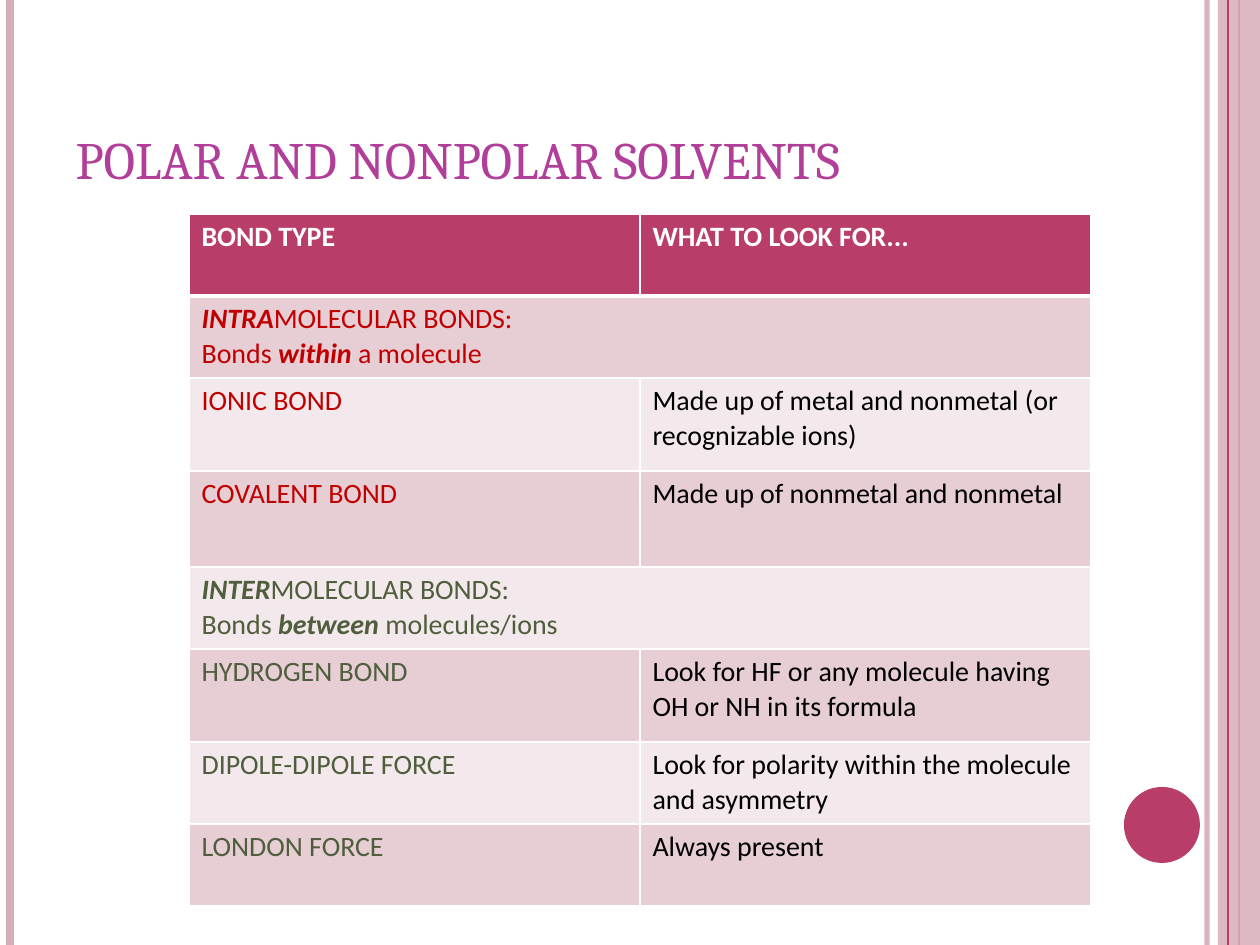
from lxml.etree import SubElement
from pptx import Presentation
from pptx.dml.color import RGBColor
from pptx.enum.shapes import MSO_CONNECTOR, MSO_SHAPE
from pptx.enum.text import MSO_ANCHOR, PP_ALIGN
from pptx.oxml.ns import qn
from pptx.util import Emu, Pt

EMU_PER_PX = 914400 / 126
WIDTH, HEIGHT = 1260, 945

CRIMSON, PINK, WHITE, BLACK = "B83D68", "D8AFB9", "FFFFFF", "000000"
PURPLE, RED, GREEN = "B13F9A", "C00000", "4F5E3C"
BANDS = ["E6CED4", "F3E8EB"]

HEADER = ["BOND TYPE", "WHAT TO LOOK FOR..."]
# Asterisks enclose bold italic words; a row with no second text spans the table.
ROWS = [
    (82, RED, "*INTRA*MOLECULAR BONDS:\nBonds *within* a molecule", None),
    (93, RED, "IONIC BOND", "Made up of metal and nonmetal (or recognizable ions)"),
    (96, RED, "COVALENT BOND", "Made up of nonmetal and nonmetal"),
    (82, GREEN, "*INTER*MOLECULAR BONDS:\nBonds *between *molecules/ions", None),
    (93, GREEN, "HYDROGEN BOND",
     "Look for HF or any molecule having OH or NH in its formula"),
    (82, GREEN, "DIPOLE-DIPOLE FORCE",
     "Look for polarity within the molecule and asymmetry"),
    (82, GREEN, "LONDON FORCE", "Always present"),
]
HEADER_HEIGHT = 82


def px(*lengths):
    return [Emu(round(length * EMU_PER_PX)) for length in lengths]


def rgb(color):
    return RGBColor.from_string(color)


def set_alpha(fill_parent, percent):
    """Make the solid fill below the given element partly transparent."""
    color = fill_parent.find(qn("a:solidFill"))[0]
    SubElement(color, qn("a:alpha"), val=str(percent * 1000))


def add_stripe(slide, x, color, width, alpha=100):
    """Add a vertical line over the full slide height."""
    line = slide.shapes.add_connector(MSO_CONNECTOR.STRAIGHT, *px(x, 0, x, HEIGHT))
    line.line.color.rgb = rgb(color)
    line.line.width = Pt(width)
    properties = line._element.spPr
    if alpha < 100:
        set_alpha(properties.find(qn("a:ln")), alpha)
    SubElement(properties, qn("a:effectLst"))


def add_plain_shape(slide, kind, box, color, alpha=100):
    shape = slide.shapes.add_shape(kind, *px(*box))
    shape.shadow.inherit = False
    shape.fill.solid()
    shape.fill.fore_color.rgb = rgb(color)
    shape.line.fill.background()
    if alpha < 100:
        set_alpha(shape._element.spPr, alpha)


def format_font(font, name, size, color):
    font.name = name
    font.size = Pt(size)
    font.color.rgb = rgb(color)


def set_title(slide, text):
    title = slide.shapes.title
    title.left, title.top, title.width, title.height = px(63, 38, 1029, 158)
    frame = title.text_frame
    frame.text = text
    frame.word_wrap = True
    frame.vertical_anchor = MSO_ANCHOR.BOTTOM
    paragraph = frame.paragraphs[0]
    paragraph.alignment = PP_ALIGN.LEFT
    format_font(paragraph.runs[0].font, "Cambria", 30, PURPLE)


def set_borders(cell, top, bottom):
    properties = cell._tc.get_or_add_tcPr()
    for side, width in (("L", 1), ("R", 1), ("T", top), ("B", bottom)):
        line = SubElement(properties, qn(f"a:ln{side}"), w=str(Pt(width)))
        fill = SubElement(line, qn("a:solidFill"))
        SubElement(fill, qn("a:srgbClr"), val=WHITE)


def write_cell(cell, text, color, bold=False):
    """Write the text, with the words between asterisks in bold italics."""
    frame = cell.text_frame
    for index, line in enumerate(text.split("\n")):
        paragraph = frame.add_paragraph() if index else frame.paragraphs[0]
        for part, words in enumerate(line.split("*")):
            if words:
                run = paragraph.add_run()
                run.text = words
                format_font(run.font, "Calibri", 16, color)
                run.font.bold = bold or part % 2 == 1
                run.font.italic = part % 2 == 1


def add_bond_table(slide):
    heights = [HEADER_HEIGHT] + [row[0] for row in ROWS]
    frame = slide.shapes.add_table(len(heights), 2, *px(189, 214, 902, sum(heights)))
    table = frame.table
    for row, height in zip(table.rows, px(*heights)):
        row.height = height

    for row_index in range(len(heights)):
        fill = BANDS[(row_index - 1) % 2] if row_index else CRIMSON
        for column_index in range(2):
            cell = table.cell(row_index, column_index)
            set_borders(cell, 3 if row_index == 1 else 1, 1 if row_index else 3)
            cell.fill.solid()
            cell.fill.fore_color.rgb = rgb(fill)

    for column_index, text in enumerate(HEADER):
        write_cell(table.cell(0, column_index), text, WHITE, bold=True)
    for row_index, (_, color, bond, clue) in enumerate(ROWS, start=1):
        first, second = table.cell(row_index, 0), table.cell(row_index, 1)
        write_cell(first, bond, color)
        if clue:
            write_cell(second, clue, BLACK)
        else:
            first.merge(second)


def add_decoration(slide):
    add_stripe(slide, 1207, PINK, 3, alpha=93)
    add_stripe(slide, 10, PINK, 4.5)
    add_stripe(slide, 1239, CRIMSON, 1.5)
    add_plain_shape(slide, MSO_SHAPE.RECTANGLE, (1218, 0, WIDTH - 1218, HEIGHT),
                    PINK, alpha=87)
    add_stripe(slide, 1228, CRIMSON, 0.75)
    add_plain_shape(slide, MSO_SHAPE.OVAL, (1124, 787, 76, 76), CRIMSON)


def main():
    presentation = Presentation()
    presentation.slide_width, presentation.slide_height = px(WIDTH, HEIGHT)
    slide = presentation.slides.add_slide(presentation.slide_layouts[5])
    add_decoration(slide)
    set_title(slide, "POLAR AND NONPOLAR SOLVENTS")
    add_bond_table(slide)
    presentation.save("out.pptx")


if __name__ == "__main__":
    main()
